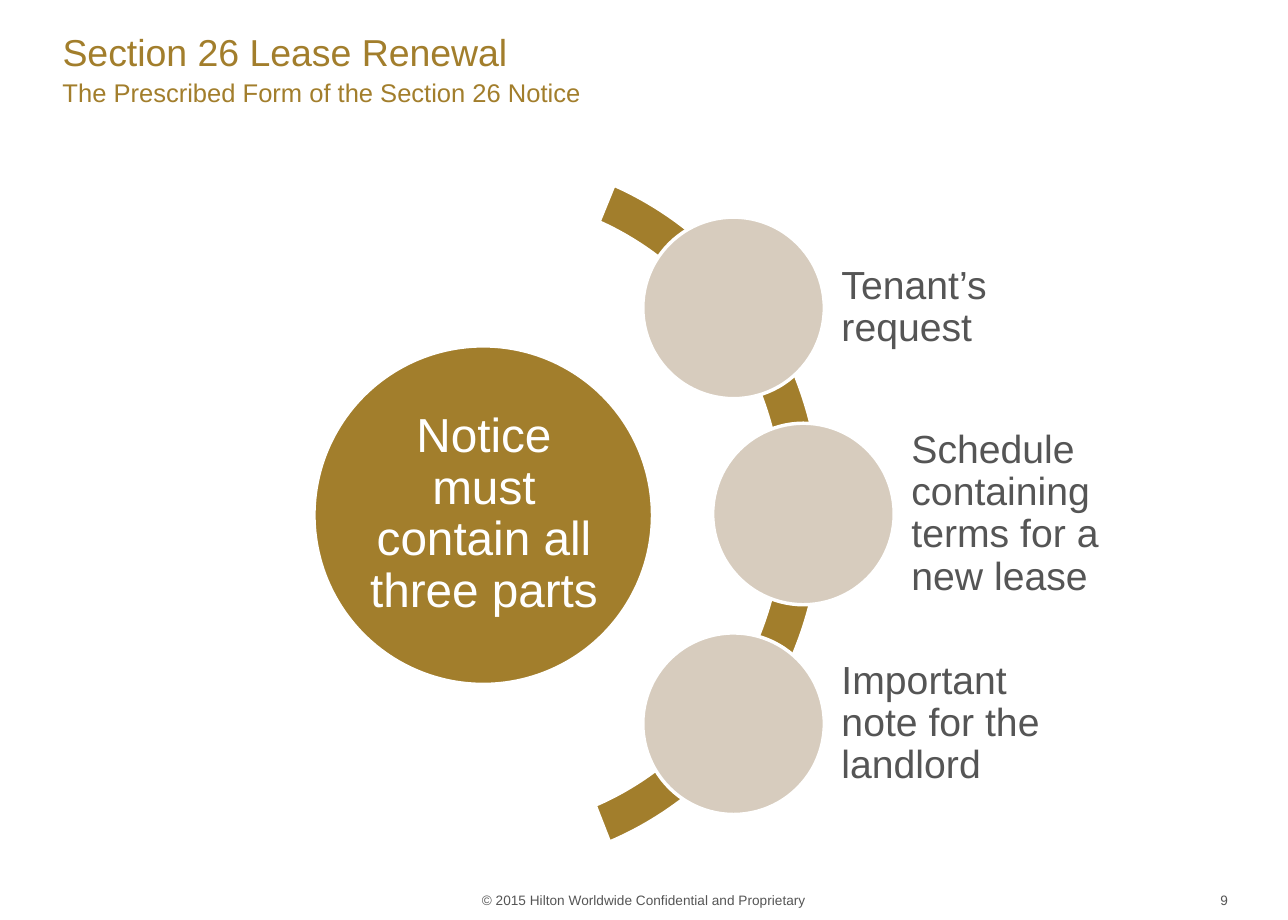
from dataclasses import dataclass

from pptx import Presentation
from pptx.dml.color import RGBColor
from pptx.enum.shapes import MSO_SHAPE
from pptx.enum.text import MSO_ANCHOR, PP_ALIGN
from pptx.util import Inches, Pt

OVAL, ARC = MSO_SHAPE.OVAL, MSO_SHAPE.BLOCK_ARC
TOP, MID, LOW = MSO_ANCHOR.TOP, MSO_ANCHOR.MIDDLE, MSO_ANCHOR.BOTTOM
LEFT, MIDDLE, RIGHT = PP_ALIGN.LEFT, PP_ALIGN.CENTER, PP_ALIGN.RIGHT

TITLE = "Section 26 Lease Renewal"
SUBTITLE = "The Prescribed Form of the Section 26 Notice"
HUB = "Notice must contain all three parts"
PARTS = [  # label, left and top of its circle
    ("Tenant’s request", 5.24, 1.77),
    ("Schedule containing terms for a new lease", 5.81, 3.45),
    ("Important note for the landlord", 5.24, 5.16),
]
FOOTER = "© 2015 Hilton Worldwide Confidential and Proprietary"
PAGE = "9"

NODE = 1.48  # circle diameter
GAP = 0.11  # from circle to label
LABEL_W, LABEL_H = 1.98, 1.43
ARC_ADJ = (175.278, 41.191, 0.058)  # start angle, end angle, thickness


@dataclass(frozen=True)
class Theme:
    font: str = "Arial"
    gold: RGBColor = RGBColor(0xA2, 0x7E, 0x2C)
    sand: RGBColor = RGBColor(0xD7, 0xCC, 0xBE)
    grey: RGBColor = RGBColor(0x55, 0x55, 0x55)
    white: RGBColor = RGBColor(0xFF, 0xFF, 0xFF)
    title: int = 22
    subtitle: int = 15
    hub: int = 28
    label: int = 23
    small: int = 8
    ring: int = 2


THEME = Theme()


def write(shape, text, size, color, align=LEFT, anchor=MID,
          pad=(0.1, 0.05), lead=None):
    """Fill a shape with one paragraph; pad is (sides, top and bottom),
    or (left, top and bottom, right)."""
    frame = shape.text_frame
    frame.word_wrap = True
    frame.vertical_anchor = anchor
    frame.margin_left, frame.margin_right = Inches(pad[0]), Inches(pad[-1] if len(pad) > 2 else pad[0])
    frame.margin_top = frame.margin_bottom = Inches(pad[1])
    para = frame.paragraphs[0]
    para.text = text
    para.alignment = align
    if lead:
        para.line_spacing = lead
    font = para.font
    font.name, font.size, font.color.rgb = THEME.font, Pt(size), color


def add_text(slide, box, *args, **style):
    write(slide.shapes.add_textbox(*map(Inches, box)), *args, **style)


def add_form(slide, kind, box, fill):
    form = slide.shapes.add_shape(kind, *map(Inches, box))
    form.shadow.inherit = False
    form.fill.solid()
    form.fill.fore_color.rgb = fill
    form.line.color.rgb = THEME.white
    form.line.width = Pt(THEME.ring)
    return form


def add_head(slide):
    head = slide.shapes.title
    head.left, head.top = Inches(0.51), Inches(0.05)
    head.width, head.height = Inches(7.67), Inches(0.74)
    pad = (0, 0.05, 0.1)
    write(head, TITLE, THEME.title, THEME.gold, pad=pad, lead=Pt(26.7))
    add_text(slide, (0.51, 0.58, 7.67, 0.35), SUBTITLE, THEME.subtitle,
             THEME.gold, anchor=TOP, pad=pad)


def add_wheel(slide):
    add_form(slide, OVAL, (2.56, 2.82, 2.76, 2.76), THEME.gold)
    add_text(slide, (2.97, 3.22, 1.95, 1.95), HUB, THEME.hub, THEME.white,
             align=MIDDLE, pad=(0.04, 0.04), lead=0.9)
    arc = add_form(slide, ARC, (1.14, 1.28, 5.56, 5.8), THEME.gold)
    for i, value in enumerate(ARC_ADJ):
        arc.adjustments[i] = value
    for label, left, top in PARTS:
        add_form(slide, OVAL, (left, top, NODE, NODE), THEME.sand)
        box = (left + NODE + GAP, top + (NODE - LABEL_H) / 2, LABEL_W, LABEL_H)
        add_text(slide, box, label, THEME.label, THEME.grey,
                 pad=(0.03, 0.03), lead=0.9)


def add_foot(slide):
    add_text(slide, (3.75, 7.21, 3, 0.24), FOOTER, THEME.small, THEME.grey,
             align=MIDDLE, anchor=LOW)
    add_text(slide, (7.56, 7.14, 2.45, 0.4), PAGE, THEME.small, THEME.grey,
             align=RIGHT, pad=(0, 0.05))


def main():
    deck = Presentation()
    deck.slide_width, deck.slide_height = Inches(10.5), Inches(7.5)
    slide = deck.slides.add_slide(deck.slide_layouts[5])
    add_head(slide)
    add_wheel(slide)
    add_foot(slide)
    deck.save("out.pptx")


if __name__ == "__main__":
    main()
